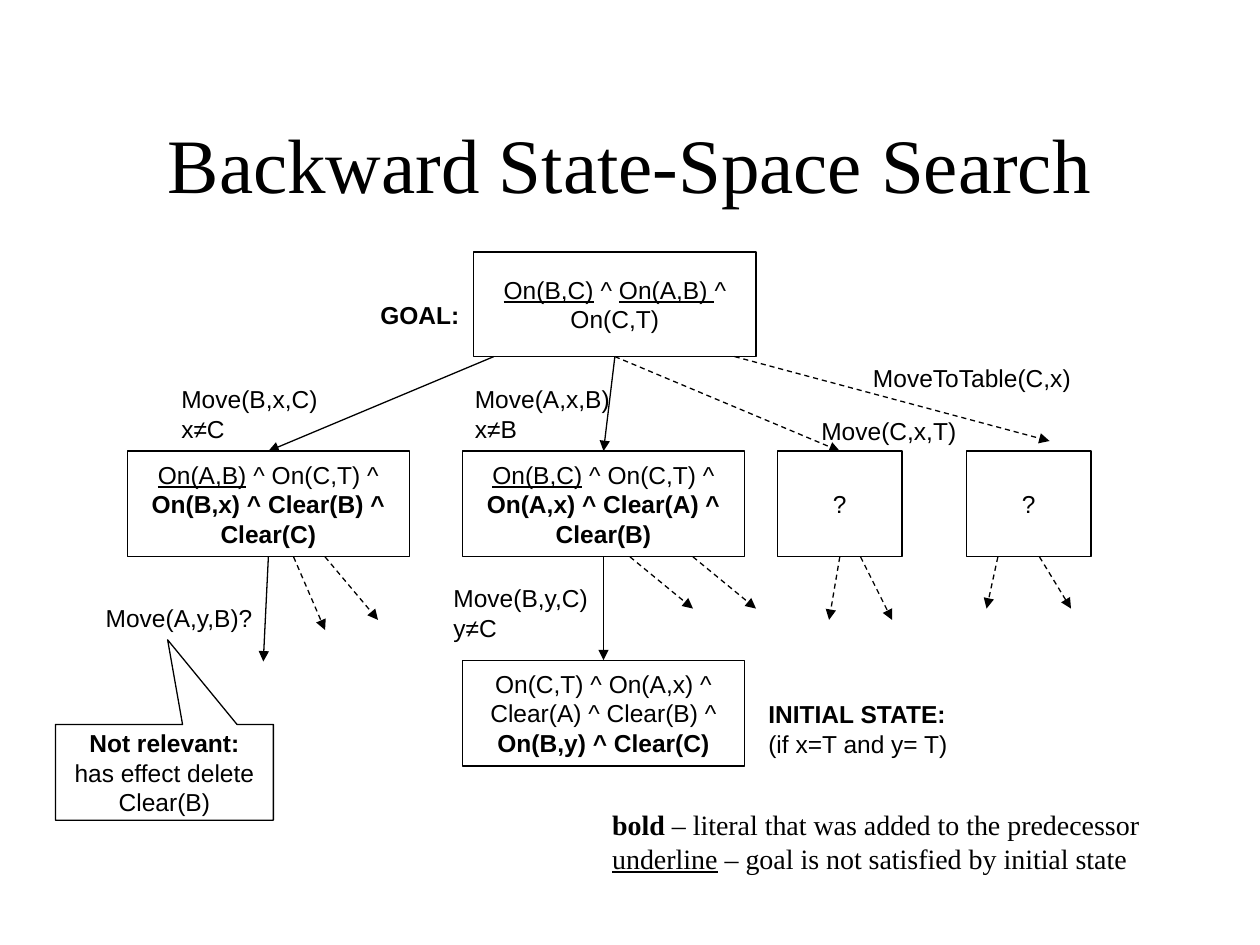
from dataclasses import dataclass
from typing import NamedTuple, Optional

from lxml import etree
from pptx import Presentation
from pptx.dml.color import RGBColor
from pptx.enum.dml import MSO_LINE
from pptx.enum.shapes import MSO_CONNECTOR, MSO_SHAPE
from pptx.enum.text import MSO_ANCHOR, MSO_AUTO_SIZE, PP_ALIGN
from pptx.oxml.ns import qn
from pptx.util import Inches, Pt


@dataclass(frozen=True)
class Theme:
    ink: RGBColor = RGBColor(0, 0, 0)
    paper: RGBColor = RGBColor(255, 255, 255)
    serif: str = "Times New Roman"
    sans: str = "Arial"
    title: int = 44
    legend: int = 16
    label: int = 14
    line: float = 0.75


THEME = Theme()
TOP, BOTTOM = 0, 2  # connection sites of a rectangle


class Run(NamedTuple):
    text: str
    bold: bool = False
    underline: bool = False


class State(NamedTuple):
    left: float
    top: float
    width: float
    height: float
    runs: list


class Label(NamedTuple):
    left: float
    top: float
    width: float
    height: float
    paragraphs: list


class Arrow(NamedTuple):
    start: tuple
    end: tuple
    dashed: bool = True
    source: Optional[str] = None  # state whose bottom middle it leaves
    target: Optional[str] = None  # state whose top middle it reaches


def bold(text: str) -> Run:
    return Run(text, bold=True)


def under(text: str) -> Run:
    return Run(text, underline=True)


def write(frame, paragraphs, *, font=THEME.sans, size=THEME.label,
          align=PP_ALIGN.LEFT, anchor=MSO_ANCHOR.TOP, wrap=True) -> None:
    """Fill a text frame with paragraphs, each a list of runs."""
    frame.word_wrap = wrap
    frame.vertical_anchor = anchor
    for index, runs in enumerate(paragraphs):
        paragraph = frame.add_paragraph() if index else frame.paragraphs[0]
        paragraph.alignment = align
        for part in runs:
            run = paragraph.add_run()
            run.text = part.text
            run.font.name, run.font.size = font, Pt(size)
            run.font.bold, run.font.underline = part.bold, part.underline
            run.font.color.rgb = THEME.ink


def draw_state(slide, state: State, kind=MSO_SHAPE.RECTANGLE):
    box = slide.shapes.add_shape(kind, *map(Inches, state[:4]))
    box.shadow.inherit = False
    box.fill.solid()
    box.fill.fore_color.rgb = THEME.paper
    box.line.color.rgb = THEME.ink
    box.line.width = Pt(THEME.line)
    write(box.text_frame, [state.runs], align=PP_ALIGN.CENTER, anchor=MSO_ANCHOR.MIDDLE)
    return box


def draw_label(slide, label: Label, **text_format):
    box = slide.shapes.add_textbox(*map(Inches, label[:4]))
    write(box.text_frame, label.paragraphs, **text_format)
    return box


def draw_arrow(slide, arrow: Arrow, boxes: dict) -> None:
    line = slide.shapes.add_connector(
        MSO_CONNECTOR.STRAIGHT, *map(Inches, arrow.start + arrow.end))
    if arrow.source:
        line.begin_connect(boxes[arrow.source], BOTTOM)
    if arrow.target:
        line.end_connect(boxes[arrow.target], TOP)
    line.line.color.rgb = THEME.ink
    line.line.width = Pt(THEME.line)
    if arrow.dashed:
        line.line.dash_style = MSO_LINE.DASH
    etree.SubElement(line.line._get_or_add_ln(), qn("a:tailEnd"), type="triangle")
    etree.SubElement(line._element.spPr, qn("a:effectLst"))


# Search tree: the goal, its predecessors in one row, the initial state
WIDE, NARROW, TALL = 2.24, 0.99, 0.84
ROW_1, ROW_2, ROW_3 = 2, 3.58, 5.24
GOAL_BASE, ROW_2_BASE = 2.83, ROW_2 + TALL
STATES = {
    "goal": State(3.76, ROW_1, WIDE, 0.83, [
        under("On(B,C)"), Run(" ^ "), under("On(A,B) "), Run("^ On(C,T)")]),
    "move B": State(1.01, ROW_2, WIDE, TALL, [
        under("On(A,B)"), Run(" ^ On(C,T) ^ "), bold("On(B,x) ^ Clear(B) ^ Clear(C)")]),
    "move A": State(3.67, ROW_2, WIDE, TALL, [
        under("On(B,C)"), Run(" ^ On(C,T) ^ "), bold("On(A,x) ^ Clear(A) ^ Clear(B)")]),
    "move C": State(6.17, ROW_2, NARROW, TALL, [Run("?")]),
    "table C": State(7.67, ROW_2, NARROW, TALL, [Run("?")]),
    "initial": State(3.67, ROW_3, WIDE, TALL, [
        Run("On(C,T) ^ On(A,x) ^ Clear(A) ^ Clear(B) ^ "), bold("On(B,y) ^ Clear(C)")]),
}
ARROWS = [
    Arrow((3.92, GOAL_BASE), (2.13, ROW_2), False, target="move B"),
    Arrow((4.88, GOAL_BASE), (4.79, ROW_2), False, "goal", "move A"),
    Arrow((4.88, GOAL_BASE), (6.67, ROW_2), True, "goal", "move C"),
    Arrow((5.83, GOAL_BASE), (8.33, 3.5)),
    Arrow((2.13, ROW_2_BASE), (2.09, 5.25), False, "move B"),
    Arrow((4.79, ROW_2_BASE), (4.79, ROW_3), False, "move A", "initial"),
    Arrow((6.67, ROW_2_BASE), (6.58, 4.92), True, "move C"),
]
# Unexplored branches: start x, end x, end y
BRANCHES = [(2.33, 2.58, 5), (2.58, 3, 4.92), (5, 5.5, 4.83), (5.5, 6, 4.83),
            (6.83, 7.08, 4.92), (7.92, 7.83, 4.83), (8.25, 8.5, 4.83)]
ARROWS += [Arrow((x, ROW_2_BASE), (end_x, end_y)) for x, end_x, end_y in BRANCHES]

LABELS = [
    Label(1.34, 3, 1.39, 0.25, [[Run("Move(B,x,C)")], [Run("x≠C")]]),
    Label(3.67, 3, 1.33, 0.33, [[Run("Move(A,x,B)")], [Run("x≠B")]]),
    Label(3.5, 4.58, 1.34, 0.34, [[Run("Move(B,y,C)")], [Run("y≠C")]]),
    Label(2.92, 2.33, 0.83, 0.33, [[bold("GOAL:")]]),
    Label(6, 5.5, 1.67, 0.58, [[bold("INITIAL STATE:"), Run(" (if x=T and y= T)")]]),
    Label(0.74, 4.74, 1.43, 0.34, [[Run("Move(A,y,B)?")]]),
    Label(6.42, 3.25, 1.33, 0.33, [[Run("Move(C,x,T)")]]),
    Label(6.83, 2.83, 1.91, 0.33, [[Run("MoveToTable(C,x)")]]),
]
OBJECTION = State(0.44, 5.75, 1.73, 0.76, [
    bold("Not relevant: "), Run("has effect delete Clear(B)")])
LEGEND = Label(4.76, 6.36, 4.41, 0.64, [
    [bold("bold"), Run(" – literal that was added to the predecessor")],
    [under("underline"), Run(" – goal is not satisfied by initial state")]])


def main() -> None:
    deck = Presentation()
    deck.slide_width, deck.slide_height = Inches(10), Inches(7.5)
    slide = deck.slides.add_slide(deck.slide_layouts[5])

    # Title
    title = slide.shapes.title
    title.left, title.top = Inches(0.75), Inches(0.67)
    title.width, title.height = Inches(8.5), Inches(1.25)
    write(title.text_frame, [[Run("Backward State-Space Search")]], font=THEME.serif,
          size=THEME.title, align=PP_ALIGN.CENTER, anchor=MSO_ANCHOR.MIDDLE)

    # States, arrows and action labels
    boxes = {name: draw_state(slide, state) for name, state in STATES.items()}
    for arrow in ARROWS:
        draw_arrow(slide, arrow, boxes)
    for label in LABELS:
        draw_label(slide, label)

    # Callout pointing at the rejected action
    callout = draw_state(slide, OBJECTION, MSO_SHAPE.RECTANGULAR_CALLOUT)
    callout.adjustments[0], callout.adjustments[1] = 0.015, -1.384

    # Legend
    legend = draw_label(slide, LEGEND, font=THEME.serif, size=THEME.legend, wrap=False)
    legend.text_frame.auto_size = MSO_AUTO_SIZE.SHAPE_TO_FIT_TEXT

    deck.save("out.pptx")


if __name__ == "__main__":
    main()
